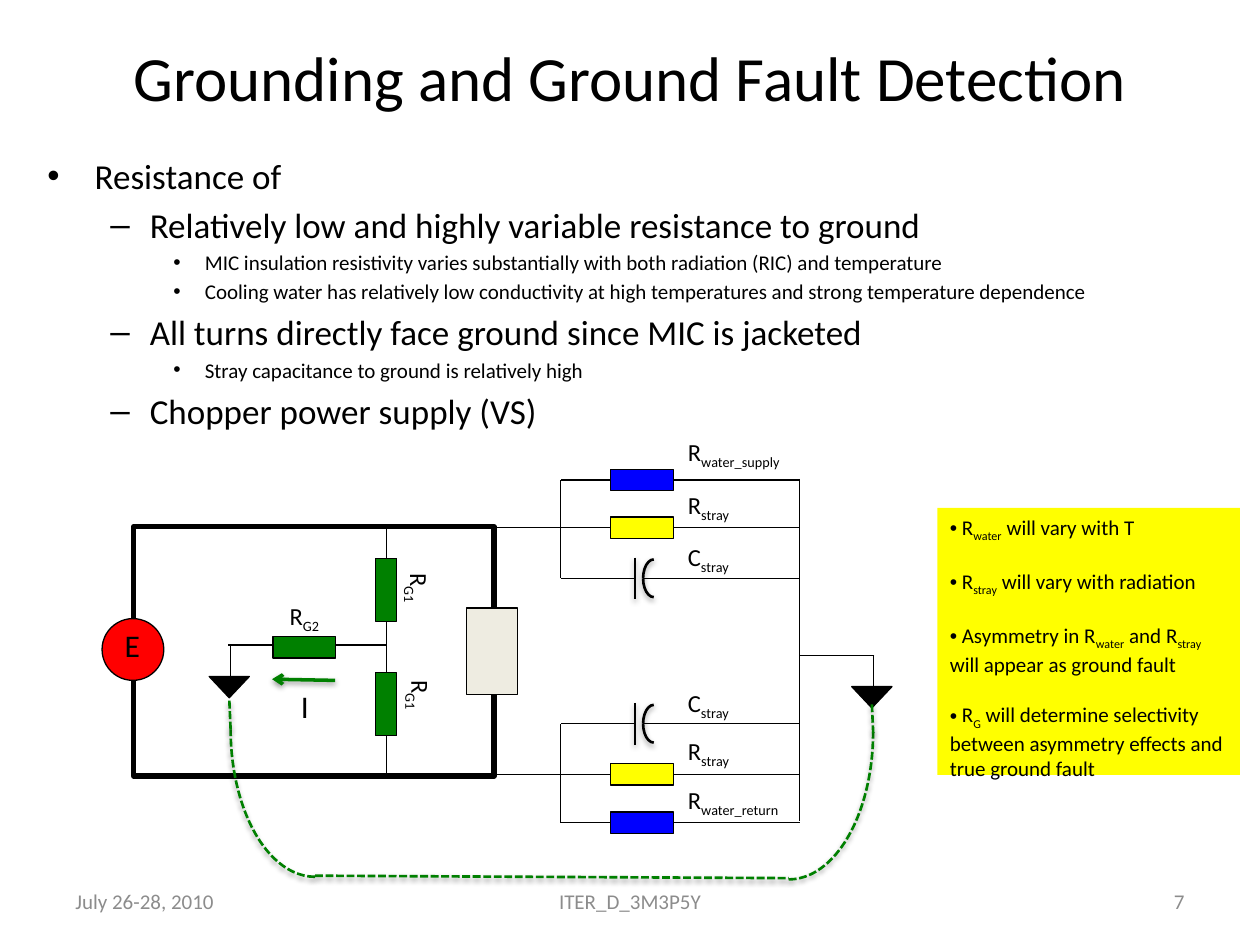
from dataclasses import dataclass

from lxml.etree import SubElement
from pptx import Presentation
from pptx.dml.color import RGBColor as RGB
from pptx.enum.dml import MSO_LINE as DASH
from pptx.enum.shapes import MSO_CONNECTOR as LINK, MSO_SHAPE as PRESET
from pptx.enum.text import MSO_ANCHOR as ANCHOR, PP_ALIGN as ALIGN
from pptx.oxml.ns import qn
from pptx.util import Pt


@dataclass(frozen=True)
class Theme:
    font: str = "Calibri"
    black: RGB = RGB(0, 0, 0)
    grey: RGB = RGB(0x8C, 0x8C, 0x8C)
    green: RGB = RGB(0, 0x80, 0)
    red: RGB = RGB(0xFF, 0, 0)
    blue: RGB = RGB(0, 0, 0xFF)
    yellow: RGB = RGB(0xFF, 0xFF, 0)
    beige: RGB = RGB(0xEE, 0xEC, 0xE1)
    title: int = 36
    heading: int = 20
    symbol: int = 18
    label: int = 14
    small: int = 12
    thin: float = 0.75


theme = Theme()
deck = Presentation()
deck.slide_width, deck.slide_height = Pt(720), Pt(540)
slide = deck.slides.add_slide(deck.slide_layouts[5])
shapes = slide.shapes


def write(paragraph, pieces, size, color=theme.black, mark=None, left=0, hang=0):
    """Add runs; every second piece is a subscript."""
    if mark:
        props = paragraph._p.get_or_add_pPr()
        props.set("marL", str(Pt(left)))
        props.set("indent", str(Pt(-hang)))
        SubElement(props, qn("a:buFont"), typeface="Arial")
        SubElement(props, qn("a:buChar"), char=mark)
    for index, piece in enumerate(pieces):
        run = paragraph.add_run()
        run.text = piece
        run.font.name, run.font.size = theme.font, Pt(size)
        run.font.color.rgb = color
        if index % 2:
            run.font._element.set("baseline", "-25000")


def wire(x1, y1, x2, y2, color=theme.black, width=theme.thin):
    link = shapes.add_connector(LINK.STRAIGHT, Pt(x1), Pt(y1), Pt(x2), Pt(y2))
    link.line.color.rgb = color
    link.line.width = Pt(width)
    SubElement(link._element.spPr, qn("a:effectLst"))
    return link


# Title
title = shapes.title
title.left, title.top, title.width, title.height = Pt(36), Pt(-1.5), Pt(648), Pt(90)
title.text_frame.vertical_anchor = ANCHOR.MIDDLE
title.text_frame.paragraphs[0].alignment = ALIGN.CENTER
write(title.text_frame.paragraphs[0], ["Grounding and Ground Fault Detection"], theme.title)

# Outline
outline = shapes.add_textbox(Pt(20), Pt(82), Pt(670), Pt(356)).text_frame
outline.word_wrap = True
outline.margin_top = Pt(6)
levels = [("•", 27, 27, theme.heading), ("–", 58.5, 22.5, theme.heading),
          ("•", 90, 18, theme.small)]
points = [
    (0, "Resistance of"),
    (1, "Relatively low and highly variable resistance to ground"),
    (2, "MIC insulation resistivity varies substantially with both radiation (RIC) and temperature"),
    (2, "Cooling water has relatively low conductivity at high temperatures and strong temperature dependence"),
    (1, "All turns directly face ground since MIC is jacketed"),
    (2, "Stray capacitance to ground is relatively high"),
    (1, "Chopper power supply (VS)"),
]
for index, (level, words) in enumerate(points):
    point = outline.add_paragraph() if index else outline.paragraphs[0]
    point.level = level
    mark, left, hang, size = levels[level]
    write(point, [words], size, mark=mark, left=left, hang=hang)
    if index:
        point.space_before = Pt(size * 0.2)

# Main loop and wires of the grounding network
loop = shapes.add_shape(PRESET.RECTANGLE, Pt(76.3), Pt(301), Pt(206), Pt(142.5))
loop.shadow.inherit = False
loop.fill.background()
loop.line.color.rgb, loop.line.width = theme.black, Pt(3)
for ends in [(220.7, 368.6, 130.3, 368.6), (131.8, 368.6, 131.8, 386.6),
             (220.7, 301, 220.7, 444.5), (457, 273.6, 457, 469),
             (499, 374.4, 499, 392.4), (499.7, 374.4, 457, 374.4)]:
    wire(*ends)

# Parts: preset, left, top, width, height, rotation, fill
parts = [
    (PRESET.RECTANGLE, 256.3, 357.8, 49.7, 28.8, 90, theme.beige),
    (PRESET.RECTANGLE, 167.8, 352, 12.2, 36, 90, theme.green),
    (PRESET.RECTANGLE, 214.6, 319, 12.2, 36, 0, theme.green),
    (PRESET.RECTANGLE, 214.6, 384.5, 12.2, 36, 0, theme.green),
    (PRESET.OVAL, 58.3, 353.5, 35.3, 35.3, 0, theme.red),
    (PRESET.ISOSCELES_TRIANGLE, 119.5, 386.6, 23, 12.2, 0, theme.black),
    (PRESET.ISOSCELES_TRIANGLE, 486.7, 392.4, 23, 12.2, 0, theme.black),
]
# Labels: left, top, width, height, rotation, size, pieces
labels = [
    (223.2, 324.7, 33, 24.5, 90, theme.label, ["R", "G1"]),
    (223.9, 385.9, 33, 24.5, 90, theme.label, ["R", "G1"]),
    (158.4, 339.8, 33, 24.5, 0, theme.label, ["R", "G2"]),
    (64.1, 354.2, 23.8, 28.8, 0, theme.symbol, ["E"]),
    (164.9, 388.8, 19.4, 28.8, 0, theme.symbol, ["I"]),
]
# Dashed return path: left, top, width, height, flips, colour, dash
arcs = [
    (131.8, 332.6, 96.5, 168.5, ("flipH", "flipV"), theme.green, DASH.SQUARE_DOT),
    (402.5, 334.1, 96.5, 168.5, ("flipV",), theme.green, DASH.SQUARE_DOT),
]
shadowed = []

# Stray branches above and below: capacitor, stray resistor, water resistor
for stray_c, stray_r, water, tops, water_name in [
    (330.5, 301.5, 274.3, (306, 276.5, 246.2), "water_supply"),
    (413.6, 442.6, 470.2, (389.5, 416.9, 445), "water_return"),
]:
    wire(320.5, stray_c, 320.5, water)
    wire(363, stray_c, 320.5, stray_c)
    wire(457, stray_c, 367.5, stray_c)
    wire(457, stray_r, 282.5, stray_r)
    wire(457, water, 320.5, water)
    shadowed.append(wire(363, stray_c - 11.9, 363, stray_c + 11.9, width=1))
    for flips in (("flipH",), ("flipH", "flipV")):
        arcs.append((367.5, stray_c - 10.8, 12.2, 21.6, flips, theme.black, None))
    for y, fill in ((stray_r, theme.yellow), (water, theme.blue)):
        parts.append((PRESET.RECTANGLE, 360.7, y - 18, 12.2, 36, 90, fill))
    for top, symbol, name, width in zip(tops, "CRR", ("stray", "stray", water_name), (41, 41, 73.5)):
        labels.append((386, top, width, 24.5, 0, theme.label, [symbol, name]))

for preset, left, top, width, height, turn, fill in parts:
    part = shapes.add_shape(preset, Pt(left), Pt(top), Pt(width), Pt(height))
    part.shadow.inherit = False
    part.rotation = turn
    part.fill.solid()
    part.fill.fore_color.rgb = fill
    part.line.color.rgb, part.line.width = theme.black, Pt(theme.thin)
    if preset == PRESET.ISOSCELES_TRIANGLE:
        part._element.spPr.xfrm.set("flipV", "1")

for left, top, width, height, flips, color, dash in arcs:
    arc = shapes.add_shape(PRESET.ARC, Pt(left), Pt(top), Pt(width), Pt(height))
    arc.shadow.inherit = False
    arc.fill.background()
    arc.line.color.rgb, arc.line.width = color, Pt(1.5)
    if dash:
        arc.line.dash_style = dash
    for flip in flips:
        arc._element.spPr.xfrm.set(flip, "1")
    shadowed.append(arc)

for ends in [(180, 500.4, 450.7, 501.8), (131.8, 416.9, 131, 398.9),
             (499, 419, 498.2, 401.8)]:
    dashed = wire(*ends, color=theme.green, width=1.5)
    dashed.line.dash_style = DASH.SQUARE_DOT
    shadowed.append(dashed)

# Current arrow
current = wire(191.5, 388.8, 155.5, 388.1, theme.green, 2)
SubElement(current.line._get_or_add_ln(), qn("a:tailEnd"), type="arrow")
shadowed.append(current)

for item in shadowed:
    effects = item._element.spPr.find(qn("a:effectLst"))
    shade = SubElement(effects, qn("a:outerShdw"), blurRad=str(Pt(3.1)), dist=str(Pt(1.6)),
                       dir="5400000", rotWithShape="0")
    tint = SubElement(shade, qn("a:srgbClr"), val=str(theme.black))
    SubElement(tint, qn("a:alpha"), val="38000")

for left, top, width, height, turn, size, pieces in labels:
    label = shapes.add_textbox(Pt(left), Pt(top), Pt(width), Pt(height))
    label.rotation = turn
    label.text_frame.word_wrap = False
    write(label.text_frame.paragraphs[0], pieces, size)

# Yellow remarks
remarks = shapes.add_textbox(Pt(535.7), Pt(290.2), Pt(172.8), Pt(152.6))
remarks.fill.solid()
remarks.fill.fore_color.rgb = theme.yellow
remarks.text_frame.word_wrap = True
for index, pieces in enumerate([
    [" R", "water", " will vary with T"],
    [" R", "stray", " will vary with radiation"],
    [" Asymmetry in R", "water", " and R", "stray", " will appear as ground fault"],
    [" R", "G", " will determine selectivity between asymmetry effects and true ground fault"],
]):
    remark = remarks.text_frame.add_paragraph() if index else remarks.text_frame.paragraphs[0]
    write(remark, pieces, theme.small, mark="•")
    if index:
        remark.space_before = Pt(14.6)

# Footer
for left, width, align, words in [(36, 168, ALIGN.LEFT, "July 26-28, 2010"),
                                  (246, 228, ALIGN.CENTER, "ITER_D_3M3P5Y"),
                                  (516, 168, ALIGN.RIGHT, "7")]:
    footer = shapes.add_textbox(Pt(left), Pt(500.5), Pt(width), Pt(28.8)).text_frame
    footer.word_wrap = True
    footer.vertical_anchor = ANCHOR.MIDDLE
    footer.paragraphs[0].alignment = align
    write(footer.paragraphs[0], [words], theme.small, theme.grey)

deck.save("out.pptx")
